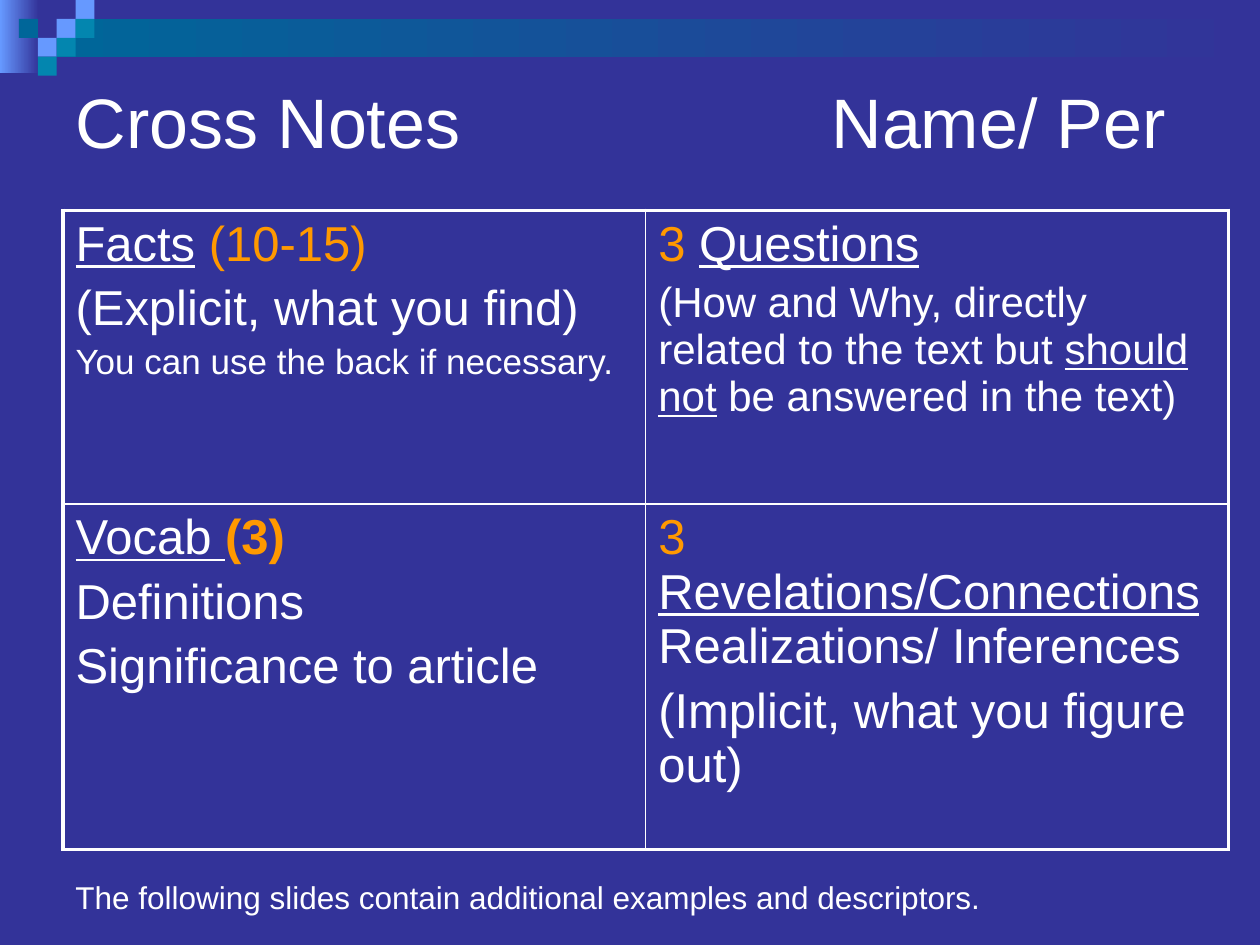
from lxml.etree import SubElement
from pptx import Presentation
from pptx.dml.color import RGBColor
from pptx.enum.shapes import MSO_SHAPE
from pptx.enum.text import MSO_ANCHOR, PP_ALIGN
from pptx.oxml.ns import qn
from pptx.util import Inches, Pt

NAVY, TEAL, SKY, AQUA = "333399", "006699", "6699FF", "0386AF"
WHITE, ORANGE = "FFFFFF", "FF9900"
OUTER, INNER = 2.25, 1

# Each cell holds paragraphs: (size, [(text, colour, style)]), u underlined, b bold
CELLS = [
    [
        [(28, [("Facts", WHITE, "u"), (" ", WHITE, ""), ("(10-15)", ORANGE, "")]),
         (28, [("(Explicit, what you find)", WHITE, "")]),
         (20, [("You can use the back if necessary.", WHITE, "")])],
        [(28, [("3 ", ORANGE, ""), ("Questions", WHITE, "u")]),
         (24, [("(How and Why, directly related to the text but ", WHITE, ""),
               ("should not", WHITE, "u"),
               (" be answered in the text)", WHITE, "")])],
    ],
    [
        [(28, [("Vocab ", WHITE, "u"), ("(3)", ORANGE, "b")]),
         (28, [("Definitions", WHITE, "")]),
         (28, [("Significance to article", WHITE, "")])],
        [(28, [("3 ", ORANGE, ""), ("Revelations/Connections ", WHITE, "u"),
               ("Realizations/ Inferences", WHITE, "")]),
         (28, [("(Implicit, what you figure out)", WHITE, "")])],
    ],
]


def colour(value):
    return RGBColor.from_string(value)


def format_span(span, size, value, style=""):
    span.font.name = "Arial"
    span.font.size = Pt(size)
    span.font.color.rgb = colour(value)
    span.font.underline = "u" in style
    span.font.bold = "b" in style


def add_block(page, box, *fills):
    """Rectangle with one fill colour, or two for a left-to-right gradient."""
    block = page.shapes.add_shape(MSO_SHAPE.RECTANGLE, *map(Inches, box))
    block.shadow.inherit = False
    block.line.fill.background()
    if len(fills) == 1:
        block.fill.solid()
        block.fill.fore_color.rgb = colour(fills[0])
    else:
        block.fill.gradient()
        block.fill.gradient_angle = 0
        for stop, value in zip(block.fill.gradient_stops, fills):
            stop.color.rgb = colour(value)


def add_banner(page, left, top):
    add_block(page, (left, top, 0.31, 0.58), SKY, NAVY)
    add_block(page, (left + 0.45, top + 0.15, 9.55, 0.3), TEAL, NAVY)
    # Small squares on a grid of equal steps: (column, row, fill)
    step = 0.15
    squares = [(3, 1, SKY), (4, 0, SKY), (4, 1, AQUA), (2, 2, SKY),
               (1, 1, TEAL), (3, 2, AQUA), (2, 3, AQUA)]
    for column, row, value in squares:
        add_block(page, (left + column * step, top + row * step, step, step), value)


def place_title(page, left, top, width, height):
    title = page.shapes.title
    title.left, title.top = Inches(left), Inches(top)
    title.width, title.height = Inches(width), Inches(height)
    frame = title.text_frame
    frame.text = "Cross Notes\tName/ Per"
    frame.vertical_anchor = MSO_ANCHOR.TOP
    frame.margin_top = Inches(0.12)
    para = frame.paragraphs[0]
    para.alignment = PP_ALIGN.LEFT
    format_span(para.runs[0], 40, WHITE)
    # Tab stop for the name
    stops = SubElement(para._p.get_or_add_pPr(), qn("a:tabLst"))
    SubElement(stops, qn("a:tab"), pos=str(Inches(6)), algn="l")


def set_borders(cell, widths):
    """Widths in points, keyed by side."""
    properties = cell._tc.get_or_add_tcPr()
    for side in "LRTB":
        line = SubElement(properties, qn(f"a:ln{side}"), w=str(Pt(widths[side])))
        fill = SubElement(line, qn("a:solidFill"))
        SubElement(fill, qn("a:srgbClr"), val=WHITE)


def fill_cell(cell, paragraphs):
    frame = cell.text_frame
    for index, (size, spans) in enumerate(paragraphs):
        para = frame.add_paragraph() if index else frame.paragraphs[0]
        para.space_before = Pt(size * 0.2)
        for text, value, style in spans:
            span = para.add_run()
            span.text = text
            format_span(span, size, value, style)


def add_notes_table(page, left, top, width, row_heights):
    frame = page.shapes.add_table(2, 2, Inches(left), Inches(top),
                                  Inches(width), Inches(sum(row_heights)))
    table = frame.table
    table.first_row = table.horz_banding = False
    for row, height in enumerate(row_heights):
        table.rows[row].height = Inches(height)
        for column in range(2):
            cell = table.cell(row, column)
            set_borders(cell, {
                "L": INNER if column else OUTER, "R": OUTER if column else INNER,
                "T": INNER if row else OUTER, "B": OUTER if row else INNER,
            })
            cell.fill.background()
            fill_cell(cell, CELLS[row][column])


def add_footnote(page, left, top, width, height):
    box = page.shapes.add_textbox(*map(Inches, (left, top, width, height)))
    box.text_frame.word_wrap = True
    box.text_frame.text = "The following slides contain additional examples and descriptors."
    format_span(box.text_frame.paragraphs[0].runs[0], 18, WHITE)


def main():
    deck = Presentation()
    deck.slide_width, deck.slide_height = Inches(10), Inches(7.5)
    page = deck.slides.add_slide(deck.slide_layouts[5])
    page.background.fill.solid()
    page.background.fill.fore_color.rgb = colour(NAVY)

    add_banner(page, 0, 0)
    place_title(page, 0.5, 0.5, 9, 1.5)
    add_notes_table(page, 0.5, 1.67, 9.25, (2.33, 2.74))
    add_footnote(page, 0.5, 6.92, 9, 0.4)
    deck.save("out.pptx")


if __name__ == "__main__":
    main()
